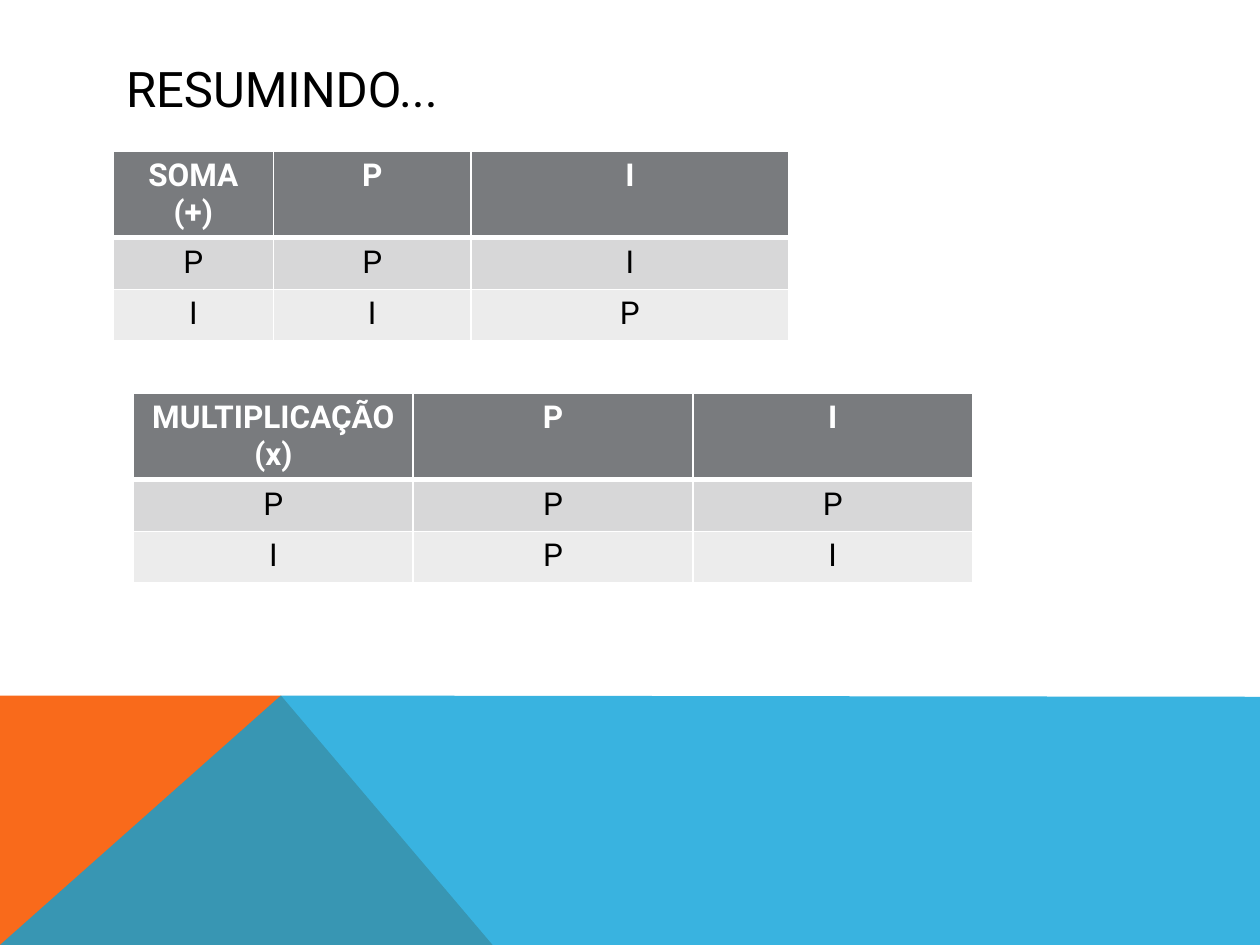
from dataclasses import dataclass

from lxml import etree
from pptx import Presentation
from pptx.dml.color import RGBColor
from pptx.enum.text import MSO_ANCHOR, PP_ALIGN
from pptx.oxml.ns import qn
from pptx.util import Inches, Pt

LEFT, CENTER = PP_ALIGN.LEFT, PP_ALIGN.CENTER
MIDDLE = MSO_ANCHOR.MIDDLE
TITLE_ONLY_LAYOUT = 5
FONT_NAME = "Roboto"
ROW_HEIGHT = 0.41
COLORS = {
    "black": "000000",
    "white": "FFFFFF",
    "header": "797B7E",
    "first_row": "D7D7D8",
    "second_row": "ECECEC",
    "orange": "F96A1B",
    "blue": "08A1D9",
}
HEADER_FORMAT = {"name": FONT_NAME, "size": Pt(18), "bold": True}
BODY_FORMAT = {**HEADER_FORMAT, "bold": False}
TITLE_FORMAT = {"name": FONT_NAME, "size": Pt(28), "bold": False}


@dataclass
class ParityTable:
    left: float
    top: float
    column_widths: list[float]
    rows: list[list[str]]


@dataclass
class Band:
    points: list[tuple[float, float]]
    color: str
    opacity: int = 100


BANDS = [
    Band([(0, 7.5), (0, 5.52), (2.23, 5.52), (3.91, 7.5)], "orange"),
    Band([(0, 7.5), (2.23, 5.52), (10, 5.53), (10, 7.5)], "blue", 80),
]
TABLES = [
    ParityTable(0.9, 1.2, [1.27, 1.57, 2.52],
                [["SOMA (+)", "P", "I"], ["P", "P", "I"], ["I", "I", "P"]]),
    ParityTable(1.06, 3.12, [2.22] * 3,
                [["MULTIPLICAÇÃO (x)", "P", "I"], ["P", "P", "P"], ["I", "P", "I"]]),
]


def rgb(color: str) -> RGBColor:
    return RGBColor.from_string(COLORS[color])


def format_font(font, values: dict, color: str) -> None:
    for attribute, value in values.items():
        setattr(font, attribute, value)
    font.color.rgb = rgb(color)


def draw_band(slide, band: Band) -> None:
    points = [(Inches(x), Inches(y)) for x, y in band.points]
    builder = slide.shapes.build_freeform(*points[0], scale=1.0)
    builder.add_line_segments(points[1:], close=True)
    shape = builder.convert_to_shape()
    shape.shadow.inherit = False
    shape.line.fill.background()
    shape.fill.solid()
    shape.fill.fore_color.rgb = rgb(band.color)
    if band.opacity < 100:
        color = shape.fill._xPr.find(".//" + qn("a:srgbClr"))
        etree.SubElement(color, qn("a:alpha"), val=str(band.opacity * 1000))


def draw_title(slide, text: str) -> None:
    title = slide.shapes.title
    title.left, title.top = Inches(0.9), Inches(0.4)
    title.width, title.height = Inches(8.22), Inches(0.6)
    title.text_frame.vertical_anchor = MIDDLE
    title.text_frame.word_wrap = True
    paragraph = title.text_frame.paragraphs[0]
    paragraph.alignment = LEFT
    run = paragraph.add_run()
    run.text = text
    format_font(run.font, TITLE_FORMAT, "black")


def set_borders(cell, widths: dict[str, int]) -> None:
    """Add white cell borders; call before the fill, which must follow them."""
    properties = cell._tc.get_or_add_tcPr()
    for side, width in widths.items():
        line = etree.SubElement(properties, qn(f"a:ln{side}"), w=str(Pt(width)))
        fill = etree.SubElement(line, qn("a:solidFill"))
        etree.SubElement(fill, qn("a:srgbClr"), val=COLORS["white"])


def draw_table(slide, parity: ParityTable) -> None:
    row_count, column_count = len(parity.rows), len(parity.column_widths)
    table = slide.shapes.add_table(
        row_count, column_count, Inches(parity.left), Inches(parity.top),
        Inches(sum(parity.column_widths)), Inches(ROW_HEIGHT * row_count)).table
    for column, width in zip(table.columns, parity.column_widths):
        column.width = Inches(width)
    for row_index, texts in enumerate(parity.rows):
        table.rows[row_index].height = Inches(ROW_HEIGHT)
        is_header = row_index == 0
        for column_index, text in enumerate(texts):
            cell = table.cell(row_index, column_index)
            set_borders(cell, {"L": 1, "R": 1, "T": 3 if row_index == 1 else 1,
                               "B": 3 if is_header else 1})
            cell.fill.solid()
            cell.fill.fore_color.rgb = rgb(("header", "first_row", "second_row")[row_index])
            paragraph = cell.text_frame.paragraphs[0]
            paragraph.alignment = CENTER
            run = paragraph.add_run()
            run.text = text
            format_font(run.font, HEADER_FORMAT if is_header else BODY_FORMAT,
                        "white" if is_header else "black")


def main() -> None:
    presentation = Presentation()
    presentation.slide_width, presentation.slide_height = Inches(10), Inches(7.5)
    slide = presentation.slides.add_slide(presentation.slide_layouts[TITLE_ONLY_LAYOUT])
    for band in BANDS:
        draw_band(slide, band)
    draw_title(slide, "RESUMINDO...")
    for parity in TABLES:
        draw_table(slide, parity)
    presentation.save("out.pptx")


if __name__ == "__main__":
    main()
